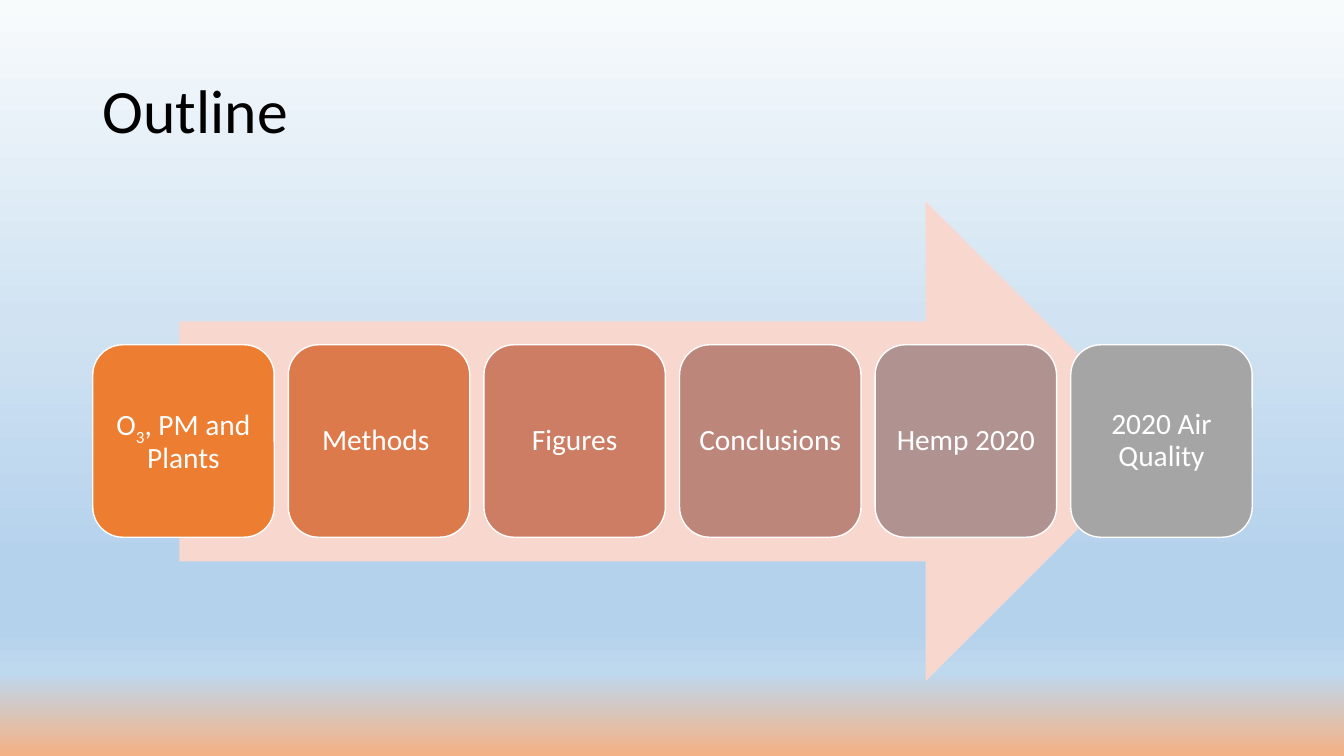
import pptx
import pptx.util
import pptx.dml.color
import pptx.enum.shapes
import pptx.enum.text
import pptx.oxml.ns
import lxml.etree
from dataclasses import dataclass

Inches = pptx.util.Inches
Pt = pptx.util.Pt
RGB = pptx.dml.color.RGBColor.from_string
SHAPE = pptx.enum.shapes.MSO_SHAPE
ALIGN = pptx.enum.text.PP_ALIGN
qn = pptx.oxml.ns.qn


@dataclass(frozen=True)
class Theme:
    font: str = "Calibri"
    title_size: int = 44
    step_size: int = 21
    title_color: str = "000000"
    step_color: str = "FFFFFF"
    arrow: str = "F8D7CE"
    # Background stops: position in percent, colour
    sky: tuple = ((0, "F8FBFC"), (42, "D1E3F3"), (74, "B5D2EC"),
                  (83, "B5D2EC"), (89, "BED8EE"), (100, "F4B183"))


THEME = Theme()

# Each step: fill colour and text runs as (text, is_subscript)
STEPS = [
    ("ED7D31", [("O", False), ("3", True), (", PM and Plants", False)]),
    ("DC7A4B", [("Methods ", False)]),
    ("CC7D64", [("Figures", False)]),
    ("BD867B", [("Conclusions", False)]),
    ("B09391", [("Hemp 2020", False)]),
    ("A5A5A5", [("2020 Air Quality", False)]),
]
STEP_LEFT, STEP_TOP, STEP_W, STEP_H = 0.92, 3.42, 1.8, 1.91
STEP_GAP = 0.14


def apply(target, values):
    for name, value in values.items():
        setattr(target, name, value)


def set_background(s):
    fill = s.background.fill
    fill.gradient()
    fill.gradient_angle = 270
    stops = s.element.find(".//" + qn("a:gsLst"))
    for gs in list(stops):
        stops.remove(gs)
    for pos, color in THEME.sky:
        gs = lxml.etree.SubElement(stops, qn("a:gs"), pos=str(pos * 1000))
        lxml.etree.SubElement(gs, qn("a:srgbClr"), val=color)


def format_frame(tf, inset=None):
    apply(tf, {"word_wrap": True,
               "auto_size": pptx.enum.text.MSO_AUTO_SIZE.NONE,
               "vertical_anchor": pptx.enum.text.MSO_ANCHOR.MIDDLE})
    if inset is not None:
        sides = ("left", "top", "right", "bottom")
        apply(tf, {f"margin_{side}": Inches(inset) for side in sides})


def write(tf, runs, size, color, align):
    p = tf.paragraphs[0]
    apply(p, {"alignment": align, "line_spacing": 0.9})
    for text, subscript in runs:
        r = p.add_run()
        r.text = text
        apply(r.font, {"name": THEME.font, "size": Pt(size)})
        r.font.color.rgb = RGB(color)
        if subscript:
            r.font._element.set("baseline", "-25000")


def add_title(s, text):
    sp = s.shapes.title
    apply(sp, {"left": Inches(0.92), "top": Inches(0.4),
               "width": Inches(11.5), "height": Inches(1.45)})
    format_frame(sp.text_frame)
    write(sp.text_frame, [(text, False)], THEME.title_size,
          THEME.title_color, ALIGN.LEFT)


def add_shape(s, kind, box, fill):
    sp = s.shapes.add_shape(kind, *map(Inches, box))
    sp.shadow.inherit = False
    sp.fill.solid()
    sp.fill.fore_color.rgb = RGB(fill)
    sp.line.fill.background()
    return sp


def add_step(s, index, fill, runs):
    left = STEP_LEFT + index * (STEP_W + STEP_GAP)
    sp = add_shape(s, SHAPE.ROUNDED_RECTANGLE,
                   (left, STEP_TOP, STEP_W, STEP_H), fill)
    sp.line.color.rgb = RGB(THEME.step_color)
    sp.line.width = Pt(1)
    # The rounded corners add to this inset
    format_frame(sp.text_frame, inset=0.09)
    write(sp.text_frame, runs, THEME.step_size, THEME.step_color,
          ALIGN.CENTER)


def main():
    prs = pptx.Presentation()
    apply(prs, {"slide_width": Inches(13.33), "slide_height": Inches(7.5)})
    s = prs.slides.add_slide(prs.slide_layouts.get_by_name("Title Only"))
    set_background(s)
    add_title(s, "Outline")

    # Arrow behind the row of steps
    add_shape(s, SHAPE.RIGHT_ARROW, (1.78, 2, 9.78, 4.76), THEME.arrow)
    for index, (fill, runs) in enumerate(STEPS):
        add_step(s, index, fill, runs)

    prs.save("out.pptx")


if __name__ == "__main__":
    main()
